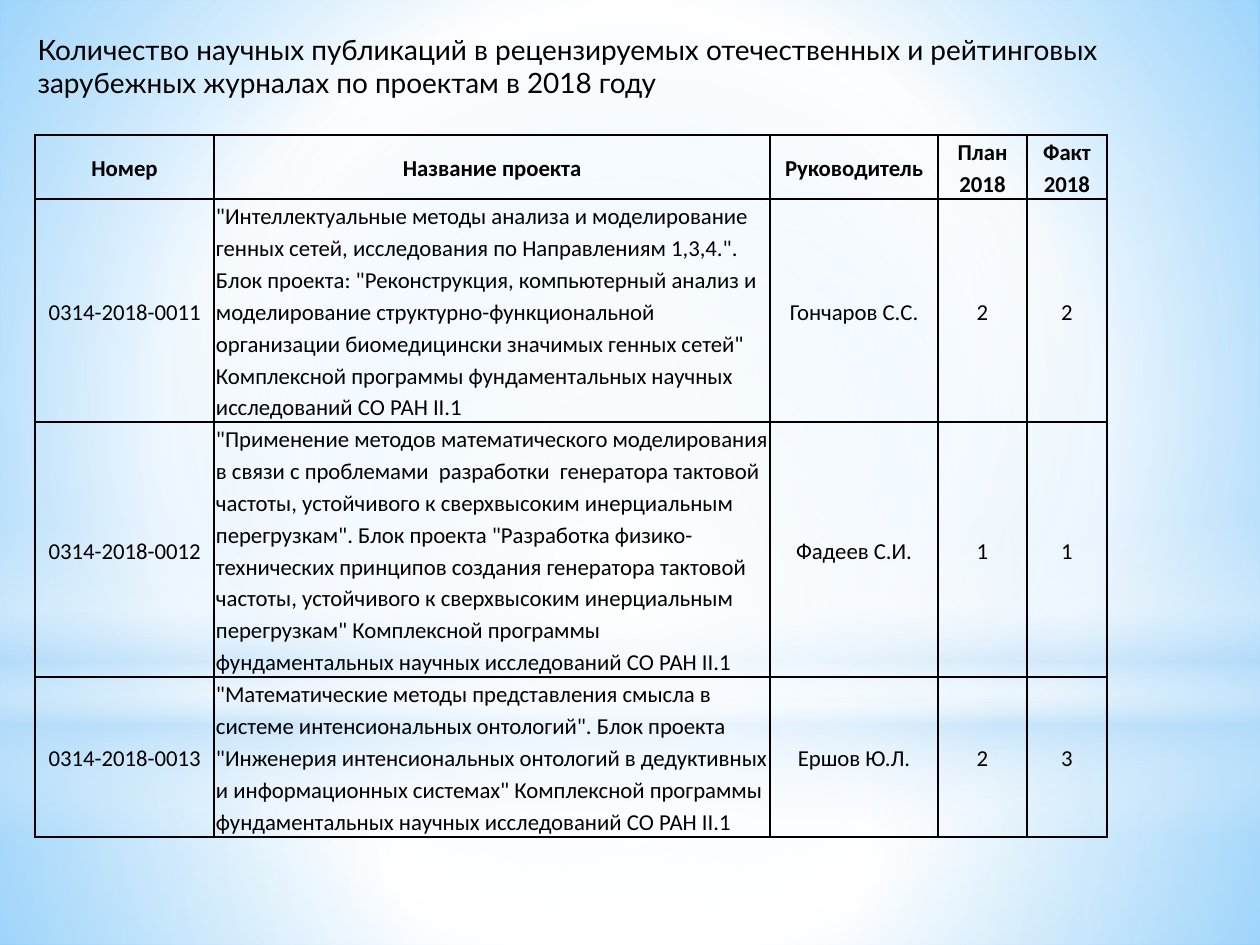
from dataclasses import dataclass
from typing import NamedTuple, Optional

import pptx
import pptx.dml.color
import pptx.enum.shapes
import pptx.enum.text
import pptx.oxml
import pptx.oxml.ns
import pptx.util

PX = 9144000 / 1260
BLACK = pptx.dml.color.RGBColor(0x00, 0x00, 0x00)
WHITE = pptx.dml.color.RGBColor(0xFF, 0xFF, 0xFF)
SKY = pptx.dml.color.RGBColor(0x99, 0xD4, 0xFE)
AZURE = pptx.dml.color.RGBColor(0x54, 0xBD, 0xFF)
MIST = pptx.dml.color.RGBColor(0xB4, 0xDC, 0xFA)

RECTANGLE = pptx.enum.shapes.MSO_SHAPE.RECTANGLE
ELLIPSE = pptx.enum.shapes.MSO_SHAPE.OVAL
CENTER = pptx.enum.text.PP_ALIGN.CENTER
LEFT = pptx.enum.text.PP_ALIGN.LEFT


class Stop(NamedTuple):
    position: int
    color: pptx.dml.color.RGBColor
    opacity: int = 100


@dataclass(frozen=True)
class Glow:
    preset: pptx.enum.shapes.MSO_SHAPE
    top: int
    height: int
    stops: tuple[Stop, ...]
    angle: Optional[int] = None


class Project(NamedTuple):
    number: str
    name: str
    leader: str
    plan: str
    fact: str


BACKDROP = (Stop(0, SKY), Stop(60, WHITE), Stop(100, AZURE))
GLOWS = (
    Glow(RECTANGLE, 703, 242, (Stop(0, WHITE, 90), Stop(37, WHITE, 75), Stop(100, MIST, 78))),
    Glow(RECTANGLE, 0, 703, (Stop(0, WHITE, 88), Stop(48, WHITE, 61), Stop(100, MIST, 78))),
    Glow(RECTANGLE, 519, 315,
         (Stop(0, WHITE, 0), Stop(29, WHITE, 29), Stop(45, MIST, 40),
          Stop(55, WHITE, 25), Stop(65, MIST, 60), Stop(100, WHITE, 0)), 90),
    Glow(ELLIPSE, 221, 703, (Stop(0, WHITE), Stop(56, WHITE, 0), Stop(100, WHITE, 0))),
)

TITLE = ("Количество научных публикаций в рецензируемых отечественных и рейтинговых "
         "зарубежных журналах по проектам в 2018 году")
COLUMN_WIDTHS = (179, 556, 168, 89, 80)
ROW_HEIGHTS = (64, 223, 254, 160)
PROJECTS = (
    Project("Номер", "Название проекта", "Руководитель", "План 2018", "Факт 2018"),
    Project("0314-2018-0011",
            '"Интеллектуальные методы анализа и моделирование генных сетей, исследования по '
            'Направлениям 1,3,4.". Блок проекта: "Реконструкция, компьютерный анализ и '
            'моделирование структурно-функциональной организации биомедицински значимых '
            'генных сетей" Комплексной программы фундаментальных научных исследований СО РАН II.1',
            "Гончаров С.С.", "2", "2"),
    Project("0314-2018-0012",
            '"Применение методов математического моделирования в связи с проблемами  разработки  '
            'генератора тактовой частоты, устойчивого к сверхвысоким инерциальным перегрузкам". '
            'Блок проекта "Разработка физико-технических принципов создания генератора тактовой '
            'частоты, устойчивого к сверхвысоким инерциальным перегрузкам" Комплексной программы '
            'фундаментальных научных исследований СО РАН II.1',
            "Фадеев С.И.", "1", "1"),
    Project("0314-2018-0013",
            '"Математические методы представления смысла в системе интенсиональных онтологий". '
            'Блок проекта "Инженерия интенсиональных онтологий в дедуктивных и информационных '
            'системах" Комплексной программы фундаментальных научных исследований СО РАН II.1',
            "Ершов Ю.Л.", "2", "3"),
)


def px(length: int) -> pptx.util.Emu:
    return pptx.util.Emu(round(length * PX))


def paint_gradient(owner, stops: tuple[Stop, ...], angle: Optional[int] = None) -> None:
    marks = "".join(
        f'<a:gs pos="{stop.position * 1000}"><a:srgbClr val="{stop.color}">'
        f'<a:alpha val="{stop.opacity * 1000}"/></a:srgbClr></a:gs>'
        for stop in stops)
    if angle is None:
        direction = ('<a:path path="circle"><a:fillToRect l="50000" t="50000" '
                     'r="50000" b="50000"/></a:path>')
    else:
        direction = f'<a:lin ang="{angle * 60000}" scaled="0"/>'
    gradient = pptx.oxml.parse_xml(
        f'<a:gradFill {pptx.oxml.ns.nsdecls("a")} rotWithShape="1">'
        f'<a:gsLst>{marks}</a:gsLst>{direction}</a:gradFill>')
    solid = owner.find(".//" + pptx.oxml.ns.qn("a:solidFill"))
    solid.getparent().replace(solid, gradient)


def draw_glow(slide, glow: Glow) -> None:
    shape = slide.shapes.add_shape(glow.preset, 0, px(glow.top), px(1260), px(glow.height))
    shape.shadow.inherit = False
    shape.line.fill.background()
    shape.fill.solid()
    paint_gradient(shape.element.spPr, glow.stops, glow.angle)


def write(paragraph, wording: str, face: str, size: int, bold: bool = False) -> None:
    run = paragraph.add_run()
    run.text = wording
    run.font.name = face
    run.font.size = pptx.util.Pt(size)
    run.font.bold = bold
    run.font.color.rgb = BLACK


def draw_title(slide) -> None:
    title = slide.shapes.title
    title.left, title.top, title.width, title.height = px(25), px(26), px(1201), px(81)
    frame = title.text_frame
    frame.word_wrap = True
    frame.auto_size = pptx.enum.text.MSO_AUTO_SIZE.NONE
    frame.vertical_anchor = pptx.enum.text.MSO_ANCHOR.TOP
    frame.paragraphs[0].alignment = LEFT
    write(frame.paragraphs[0], TITLE, "Lato", 16)
    slide.shapes.element.append(title.element)


def add_borders(cell) -> None:
    properties = cell._tc.get_or_add_tcPr()
    for side in ("lnL", "lnR", "lnT", "lnB"):
        properties.append(pptx.oxml.parse_xml(
            f'<a:{side} {pptx.oxml.ns.nsdecls("a")} w="12700"><a:solidFill>'
            f'<a:srgbClr val="{BLACK}"/></a:solidFill></a:{side}>'))


def fill_cell(cell, wording: str, heading: bool, alignment: pptx.enum.text.PP_ALIGN) -> None:
    add_borders(cell)
    cell.fill.background()
    cell.margin_left = cell.margin_right = px(2)
    cell.margin_top = cell.margin_bottom = 0
    cell.vertical_anchor = pptx.enum.text.MSO_ANCHOR.MIDDLE
    paragraph = cell.text_frame.paragraphs[0]
    paragraph.alignment = alignment
    paragraph.line_spacing = 1.15
    write(paragraph, wording, "Calibri", 13, heading)


def draw_projects(slide) -> None:
    table = slide.shapes.add_table(
        len(PROJECTS), len(COLUMN_WIDTHS), px(35), px(135),
        px(sum(COLUMN_WIDTHS)), px(sum(ROW_HEIGHTS))).table
    table.first_row = table.horz_banding = False
    for column, width in zip(table.columns, COLUMN_WIDTHS):
        column.width = px(width)
    for index, (row, height, project) in enumerate(zip(table.rows, ROW_HEIGHTS, PROJECTS)):
        row.height = px(height)
        heading = index == 0
        for field, cell, wording in zip(Project._fields, row.cells, project):
            alignment = LEFT if field == "name" and not heading else CENTER
            fill_cell(cell, wording, heading, alignment)


def main() -> None:
    presentation = pptx.Presentation()
    presentation.slide_width, presentation.slide_height = px(1260), px(945)
    slide = presentation.slides.add_slide(presentation.slide_layouts[5])
    slide.background.fill.solid()
    paint_gradient(slide.element, BACKDROP)
    for glow in GLOWS:
        draw_glow(slide, glow)
    draw_projects(slide)
    draw_title(slide)
    presentation.save("out.pptx")


if __name__ == "__main__":
    main()
